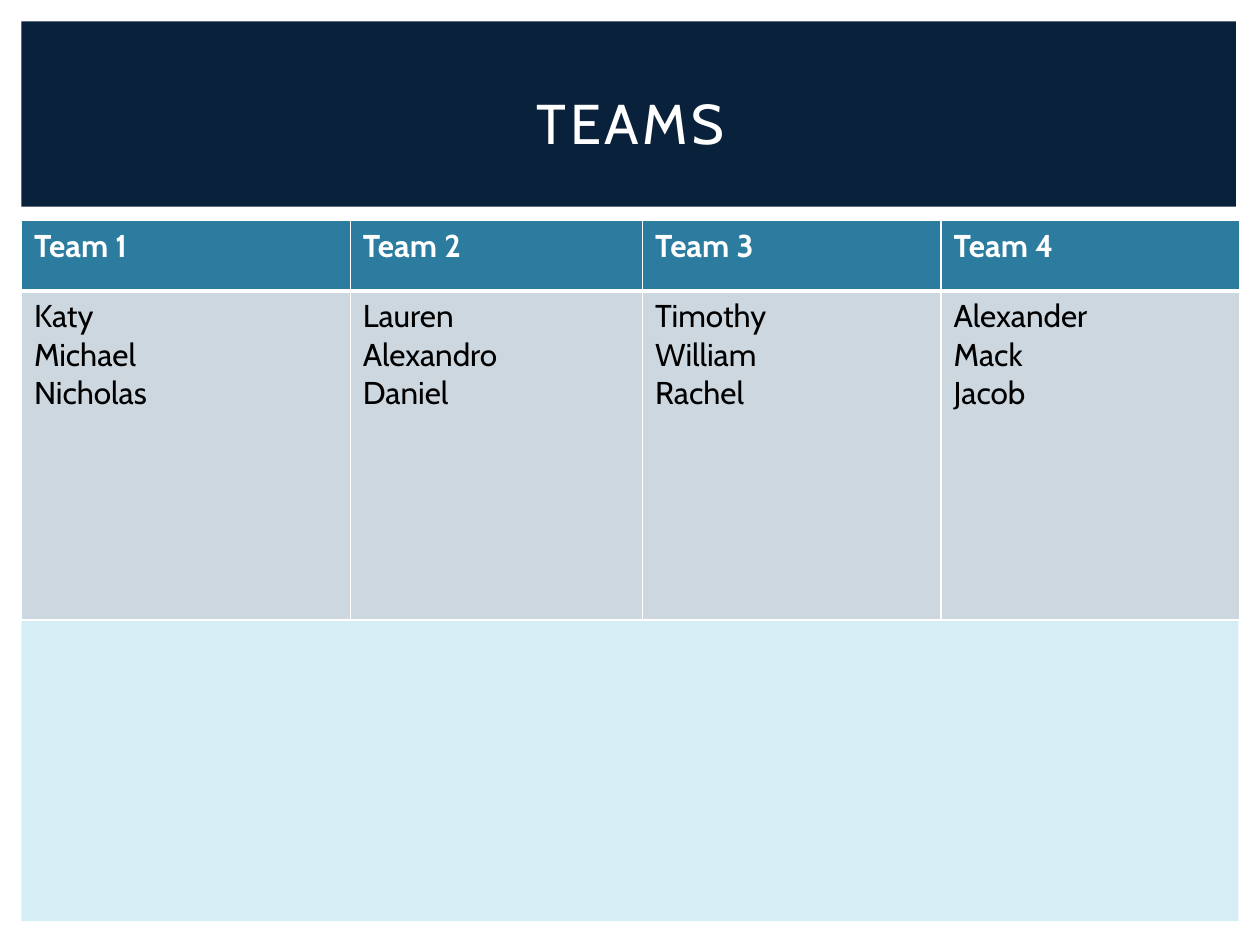
import dataclasses

import lxml.etree
import pptx
import pptx.dml.color
import pptx.enum.shapes
import pptx.enum.text
import pptx.oxml.ns
import pptx.util

RGB = pptx.dml.color.RGBColor
WHITE = RGB(0xFF, 0xFF, 0xFF)
BLACK = RGB(0x00, 0x00, 0x00)
NAVY = RGB(0x09, 0x21, 0x3B)
TEAL = RGB(0x2C, 0x7C, 0x9F)
GREY = RGB(0xCD, 0xD7, 0xDF)
PALE = RGB(0xD5, 0xED, 0xF4)
FONT = "Cabin"

# The slide is a grid of 100 columns by 75 rows
WIDTH, HEIGHT = pptx.util.Inches(10), pptx.util.Inches(7.5)
COLS, ROWS = 100, 75


@dataclasses.dataclass
class Box:
    col: float
    row: float
    wide: float
    high: float

    def place(self) -> tuple[int, int, int, int]:
        return (across(self.col), down(self.row),
                across(self.wide), down(self.high))


@dataclasses.dataclass
class Team:
    name: str
    wide: float
    crew: list[str]


@dataclasses.dataclass
class Style:
    fill: RGB
    color: RGB
    bold: bool
    top: float
    base: float


PANEL = Box(1.7, 17.9, 96.6, 55.2)
BAND = Box(1.7, 1.7, 96.4, 14.7)
TITLE = Box(4.2, 3.9, 91.7, 11.5)
TABLE = Box(1.7, 17.5, 96.7, 31.7)
HEAD_ROW = 5.6

HEAD = Style(TEAL, WHITE, True, top=1, base=3)
BODY = Style(GREY, BLACK, False, top=3, base=1)

TEAMS = [
    Team("Team 1", 26.1, ["Katy", "Michael", "Nicholas"]),
    Team("Team 2", 23.2, ["Lauren", "Alexandro", "Daniel"]),
    Team("Team 3", 23.7, ["Timothy", "William", "Rachel"]),
    Team("Team 4", 23.7, ["Alexander", "Mack", "Jacob"]),
]


def across(cols: float) -> int:
    return round(WIDTH * cols / COLS)


def down(rows: float) -> int:
    return round(HEIGHT * rows / ROWS)


def draw_block(slide, box: Box, color: RGB) -> None:
    kind = pptx.enum.shapes.MSO_SHAPE.RECTANGLE
    block = slide.shapes.add_shape(kind, *box.place())
    block.shadow.inherit = False
    block.fill.solid()
    block.fill.fore_color.rgb = color
    block.line.fill.background()


def set_font(font, size: float, color: RGB, bold: bool = False) -> None:
    font.name, font.size, font.bold = FONT, pptx.util.Pt(size), bold
    font.color.rgb = color


def draw_title(slide, box: Box, text: str) -> None:
    frame = slide.shapes.add_textbox(*box.place()).text_frame
    frame.word_wrap = True
    frame.vertical_anchor = pptx.enum.text.MSO_ANCHOR.MIDDLE
    line = frame.paragraphs[0]
    line.alignment = pptx.enum.text.PP_ALIGN.CENTER
    run = line.add_run()
    run.text = text
    set_font(line.font, 32, WHITE)
    # Letter spacing of 2 points
    run.font._element.set("spc", "200")


def set_edges(cell, style: Style) -> None:
    name = pptx.oxml.ns.qn
    props = cell._tc.get_or_add_tcPr()
    edges = {"a:lnL": 1, "a:lnR": 1, "a:lnT": style.top, "a:lnB": style.base}
    for order, (tag, width) in enumerate(edges.items()):
        edge = props.makeelement(name(tag), {"w": str(pptx.util.Pt(width))})
        props.insert(order, edge)
        fill = lxml.etree.SubElement(edge, name("a:solidFill"))
        lxml.etree.SubElement(fill, name("a:srgbClr"), val=str(WHITE))


def fill_cell(cell, lines: list[str], style: Style) -> None:
    cell.text = "\n".join(lines)
    cell.fill.solid()
    cell.fill.fore_color.rgb = style.fill
    for line in cell.text_frame.paragraphs:
        set_font(line.font, 18, style.color, style.bold)
    set_edges(cell, style)


def draw_teams(slide, box: Box, teams: list[Team]) -> None:
    frame = slide.shapes.add_table(2, len(teams), *box.place())
    table = frame.table
    table.rows[0].height = down(HEAD_ROW)
    table.rows[1].height = down(box.high - HEAD_ROW)
    for place, team in enumerate(teams):
        table.columns[place].width = across(team.wide)
        fill_cell(table.cell(0, place), [team.name], HEAD)
        fill_cell(table.cell(1, place), team.crew, BODY)


def main() -> None:
    deck = pptx.Presentation()
    deck.slide_width, deck.slide_height = WIDTH, HEIGHT
    slide = deck.slides.add_slide(deck.slide_layouts[6])

    # Backdrop
    draw_block(slide, PANEL, PALE)
    draw_block(slide, BAND, NAVY)

    # Title and team lists
    draw_title(slide, TITLE, "TEAMS")
    draw_teams(slide, TABLE, TEAMS)

    deck.save("out.pptx")


if __name__ == "__main__":
    main()
